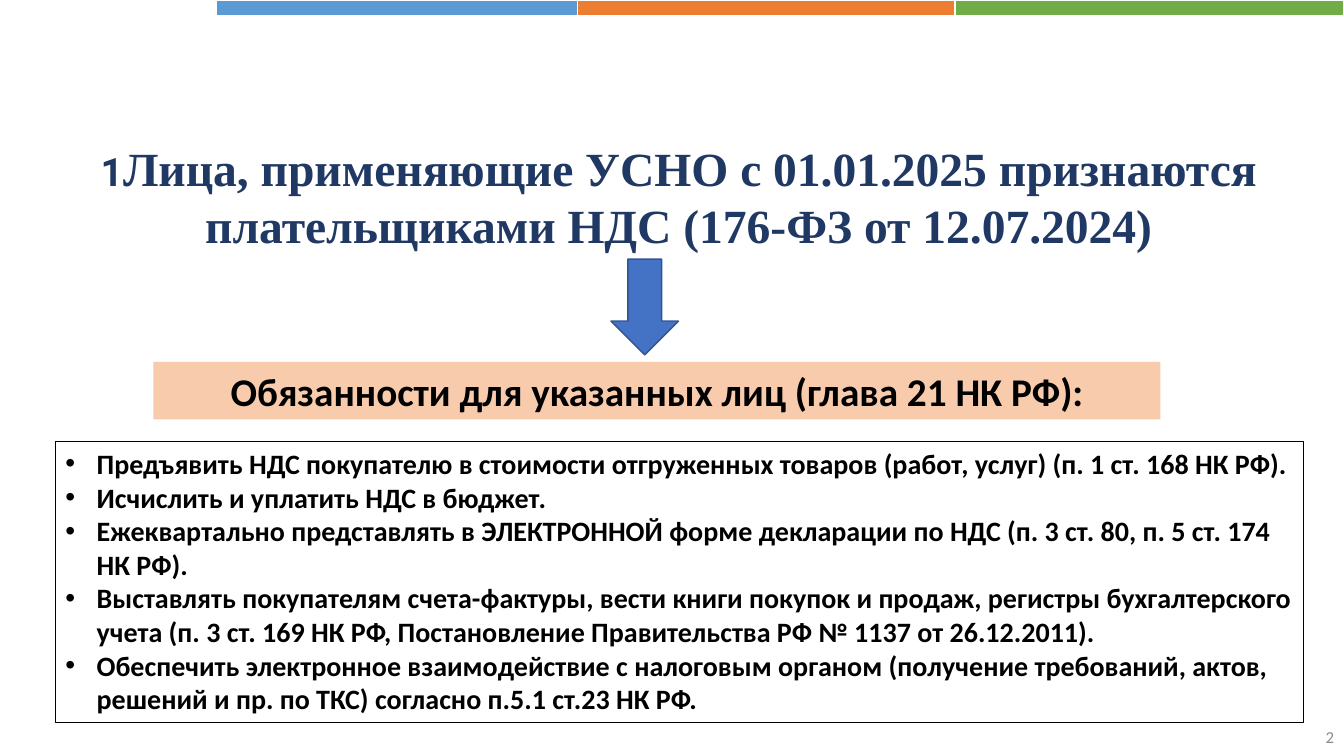
from dataclasses import dataclass
from lxml.etree import SubElement
from pptx import Presentation
from pptx.dml.color import RGBColor
from pptx.enum.shapes import MSO_SHAPE
from pptx.enum.text import MSO_ANCHOR, PP_ALIGN
from pptx.oxml.ns import qn
from pptx.util import Inches, Pt


@dataclass(frozen=True)
class Theme:
    bands: tuple = ("5B9BD5", "ED7D31", "70AD47")
    white: str = "FFFFFF"
    ink: str = "000000"
    title: str = "203864"
    arrow: str = "4472C4"
    arrow_line: str = "325491"
    bar: str = "F8CBAD"
    muted: str = "8C8C8C"
    body_font: str = "Calibri"
    title_font: str = "Times New Roman"
    mark_font: str = "Roboto"
    title_size: int = 34
    heading_size: int = 28
    body_size: int = 20
    number_size: int = 12


THEME = Theme()
WIDTH, HEIGHT = 13.33, 7.5
INDENT = 0.31

DUTIES = (
    "Предъявить НДС покупателю в стоимости отгруженных товаров (работ, услуг) (п. 1 ст. 168 НК РФ).",
    "Исчислить и уплатить НДС в бюджет.",
    "Ежеквартально представлять в ЭЛЕКТРОННОЙ форме декларации по НДС (п. 3 ст. 80, п. 5 ст. 174 НК РФ).",
    "Выставлять покупателям счета-фактуры, вести книги покупок и продаж, регистры бухгалтерского "
    "учета (п. 3 ст. 169 НК РФ, Постановление Правительства РФ № 1137 от 26.12.2011).",
    "Обеспечить электронное взаимодействие с налоговым органом (получение требований, актов, "
    "решений и пр. по ТКС) согласно п.5.1 ст.23 НК РФ.",
)


def add_box(slide, box, kind=MSO_SHAPE.RECTANGLE, fill=None, line=None, weight=1):
    sp = slide.shapes.add_shape(kind, *map(Inches, box))
    sp.shadow.inherit = False
    if fill:
        sp.fill.solid()
        sp.fill.fore_color.rgb = RGBColor.from_string(fill)
    else:
        sp.fill.background()
    if line:
        sp.line.color.rgb = RGBColor.from_string(line)
        sp.line.width = Pt(weight)
    else:
        sp.line.fill.background()
    return sp


def add_text(slide, box):
    return slide.shapes.add_textbox(*map(Inches, box))


def set_frame(sp, anchor=MSO_ANCHOR.TOP):
    tf = sp.text_frame
    tf.word_wrap = True
    tf.vertical_anchor = anchor
    return tf


def add_run(p, text, size, color=THEME.ink, font=THEME.body_font, bold=True):
    r = p.add_run()
    r.text = text
    r.font.size = Pt(size)
    r.font.name = font
    r.font.bold = bold
    r.font.color.rgb = RGBColor.from_string(color)


def add_bullet(p):
    pPr = p._p.get_or_add_pPr()
    pPr.set("marL", str(Inches(INDENT)))
    pPr.set("indent", str(-Inches(INDENT)))
    SubElement(pPr, qn("a:buFont")).set("typeface", "Arial")
    SubElement(pPr, qn("a:buChar")).set("char", "•")


def add_bands(slide, box):
    left, top, width, height = box
    edges = (0, 0.32, 0.655, 1)
    for color, start, end in zip(THEME.bands, edges, edges[1:]):
        band = (left + start * width, top, (end - start) * width, height)
        add_box(slide, band, fill=color, line=THEME.white)


def add_title(slide, box):
    p = set_frame(add_text(slide, box)).paragraphs[0]
    p.alignment = PP_ALIGN.CENTER
    add_run(p, "1", THEME.heading_size, THEME.title, THEME.mark_font)
    add_run(p, "Лица, применяющие УСНО с 01.01.2025 признаются плательщиками НДС (176-ФЗ от 12.07.2024)",
            THEME.title_size, THEME.title, THEME.title_font)


def add_heading(slide, box):
    p = set_frame(add_box(slide, box, fill=THEME.bar)).paragraphs[0]
    p.alignment = PP_ALIGN.CENTER
    add_run(p, "Обязанности для указанных лиц (глава 21 НК РФ):", THEME.heading_size)


def add_duties(slide, box):
    tf = set_frame(add_box(slide, box, line=THEME.ink, weight=0.75))
    for i, duty in enumerate(DUTIES):
        p = tf.add_paragraph() if i else tf.paragraphs[0]
        p.alignment = PP_ALIGN.LEFT
        add_bullet(p)
        add_run(p, duty, THEME.body_size)


def add_number(slide, box):
    p = set_frame(add_text(slide, box), MSO_ANCHOR.MIDDLE).paragraphs[0]
    p.alignment = PP_ALIGN.RIGHT
    add_run(p, "2", THEME.number_size, THEME.muted, bold=False)


def main():
    prs = Presentation()
    prs.slide_width, prs.slide_height = Inches(WIDTH), Inches(HEIGHT)
    s = prs.slides.add_slide(prs.slide_layouts[6])
    add_bands(s, (2.15, 0, WIDTH - 2.15, 0.16))
    add_title(s, (0.28, 1.33, 12.91, 1.25))
    add_number(s, (WIDTH - 3, 7.11, 3, 0.4))
    add_box(s, (6.06, 2.57, 0.67, 0.95), MSO_SHAPE.DOWN_ARROW, THEME.arrow, THEME.arrow_line)
    add_duties(s, (0.55, 4.38, 12.38, 2.79))
    add_heading(s, (1.52, 3.59, 9.99, 0.57))
    prs.save("out.pptx")


if __name__ == "__main__":
    main()
